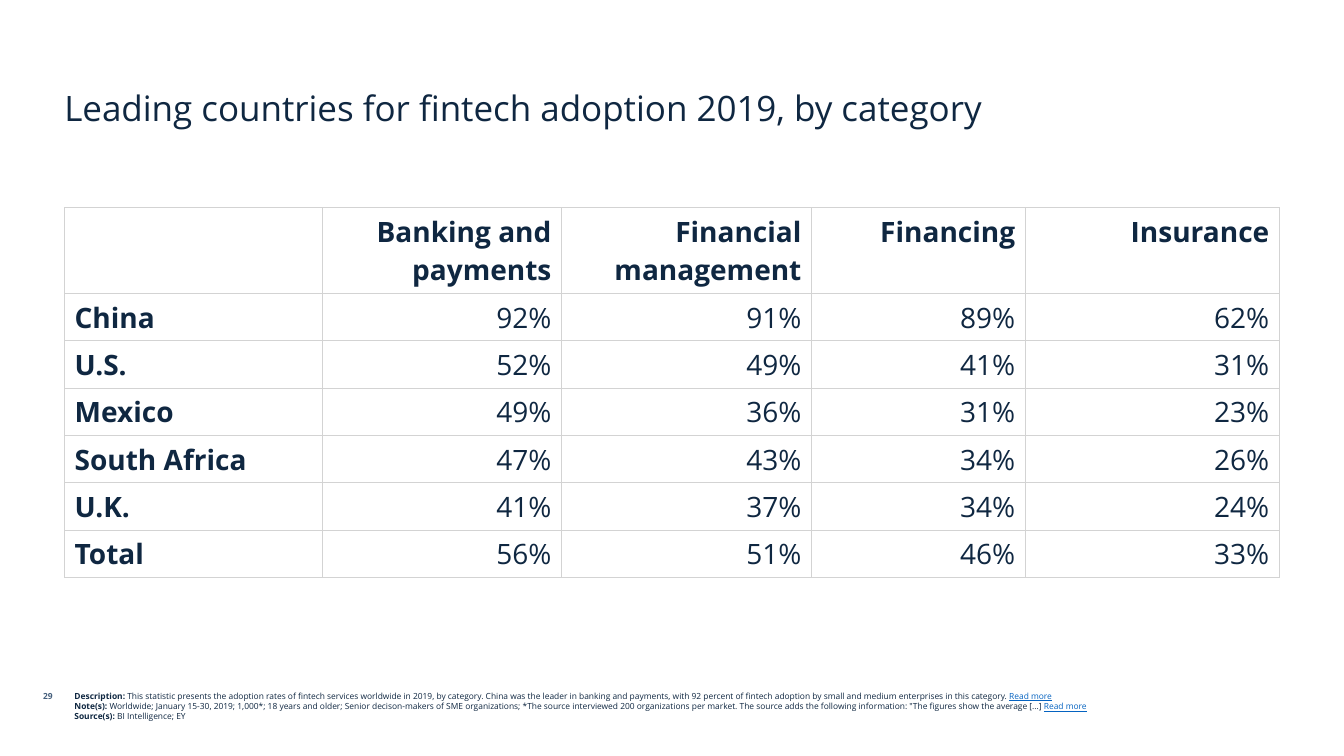
from lxml.etree import SubElement
from pptx import Presentation
from pptx.dml.color import RGBColor
from pptx.enum.text import MSO_ANCHOR, PP_ALIGN
from pptx.oxml.ns import qn
from pptx.util import Pt

PX = 9144  # EMU per px, 100 px to the inch
FONT = "Open Sans"
NAVY = RGBColor(0x0F, 0x27, 0x41)
SLATE = RGBColor(0x45, 0x5F, 0x7C)
LINK = RGBColor(0x05, 0x63, 0xC1)
GRID = RGBColor(0xD3, 0xD3, 0xD3)

COLUMN_WIDTHS = [256, 237, 248, 212, 252]
HEADER_HEIGHT, ROW_HEIGHT = 85, 47
ADOPTION = [
    ["", "Banking and payments", "Financial management", "Financing", "Insurance"],
    ["China", "92%", "91%", "89%", "62%"],
    ["U.S.", "52%", "49%", "41%", "31%"],
    ["Mexico", "49%", "36%", "31%", "23%"],
    ["South Africa", "47%", "43%", "34%", "26%"],
    ["U.K.", "41%", "37%", "34%", "24%"],
    ["Total", "56%", "51%", "46%", "33%"],
]
FOOTNOTES = [
    ("Description: ",
     "This statistic presents the adoption rates of fintech services worldwide in 2019, "
     "by category. China was the leader in banking and payments, with 92 percent of "
     "fintech adoption by small and medium enterprises in this category. ",
     "Read more"),
    ("Note(s): ",
     "Worldwide; January 15-30, 2019; 1,000*; 18 years and older; Senior decison-makers "
     "of SME organizations; *The source interviewed 200 organizations per market. The "
     "source adds the following information: \"The figures show the average [...] ",
     "Read more"),
    ("Source(s): ", "BI Intelligence; EY", ""),
]


def add_run(p, text, size, color=NAVY, bold=False, underline=False):
    r = p.add_run()
    r.text = text
    r.font.name = FONT
    r.font.size = Pt(size)
    r.font.color.rgb = color
    r.font.bold = bold
    r.font.underline = underline


def add_box(s, x, y, w, h, anchor=MSO_ANCHOR.TOP):
    tf = s.shapes.add_textbox(x * PX, y * PX, w * PX, h * PX).text_frame
    tf.word_wrap = True
    tf.vertical_anchor = anchor
    return tf


def add_title(s, x, y, w, h, text):
    tf = add_box(s, x, y, w, h, MSO_ANCHOR.BOTTOM)
    add_run(tf.paragraphs[0], text, size=25)


def set_borders(cell):
    tc_pr = cell._tc.get_or_add_tcPr()
    for side in ("a:lnL", "a:lnR", "a:lnT", "a:lnB"):
        ln = SubElement(tc_pr, qn(side), w=str(Pt(0.75)))
        fill = SubElement(ln, qn("a:solidFill"))
        SubElement(fill, qn("a:srgbClr"), val=str(GRID))


def add_adoption_table(s, x, y):
    heights = [HEADER_HEIGHT] + [ROW_HEIGHT] * (len(ADOPTION) - 1)
    table = s.shapes.add_table(len(heights), len(COLUMN_WIDTHS), x * PX, y * PX,
                               sum(COLUMN_WIDTHS) * PX, sum(heights) * PX).table
    table.first_row = table.horz_banding = False
    for column, width in zip(table.columns, COLUMN_WIDTHS):
        column.width = width * PX
    for i, (height, values) in enumerate(zip(heights, ADOPTION)):
        table.rows[i].height = height * PX
        for j, value in enumerate(values):
            cell = table.cell(i, j)
            set_borders(cell)
            cell.fill.background()
            p = cell.text_frame.paragraphs[0]
            p.alignment = PP_ALIGN.RIGHT if j else PP_ALIGN.LEFT
            if value:
                add_run(p, value, size=20, bold=i == 0 or j == 0)


def add_footer(s, x, y, w, h, number):
    """Place the notes in the box, with the page number to the left of it."""
    p = add_box(s, 0, y, x - 2, 30).paragraphs[0]
    p.alignment = PP_ALIGN.RIGHT
    add_run(p, number, size=6, color=SLATE, bold=True)
    tf = add_box(s, x, y, w, h)
    for i, (label, text, link) in enumerate(FOOTNOTES):
        p = tf.add_paragraph() if i else tf.paragraphs[0]
        add_run(p, label, size=6, bold=True)
        add_run(p, text, size=6)
        if link:
            add_run(p, link, size=6, color=LINK, underline=True)


def main():
    prs = Presentation()
    prs.slide_width, prs.slide_height = 1333 * PX, 750 * PX
    s = prs.slides.add_slide(prs.slide_layouts[6])
    add_title(s, 54, 46, 1224, 86,
              "Leading countries for fintech adoption 2019, by category")
    add_adoption_table(s, 64, 206)
    add_footer(s, 64, 681, 1047, 58, "29")
    prs.save("out.pptx")


if __name__ == "__main__":
    main()
